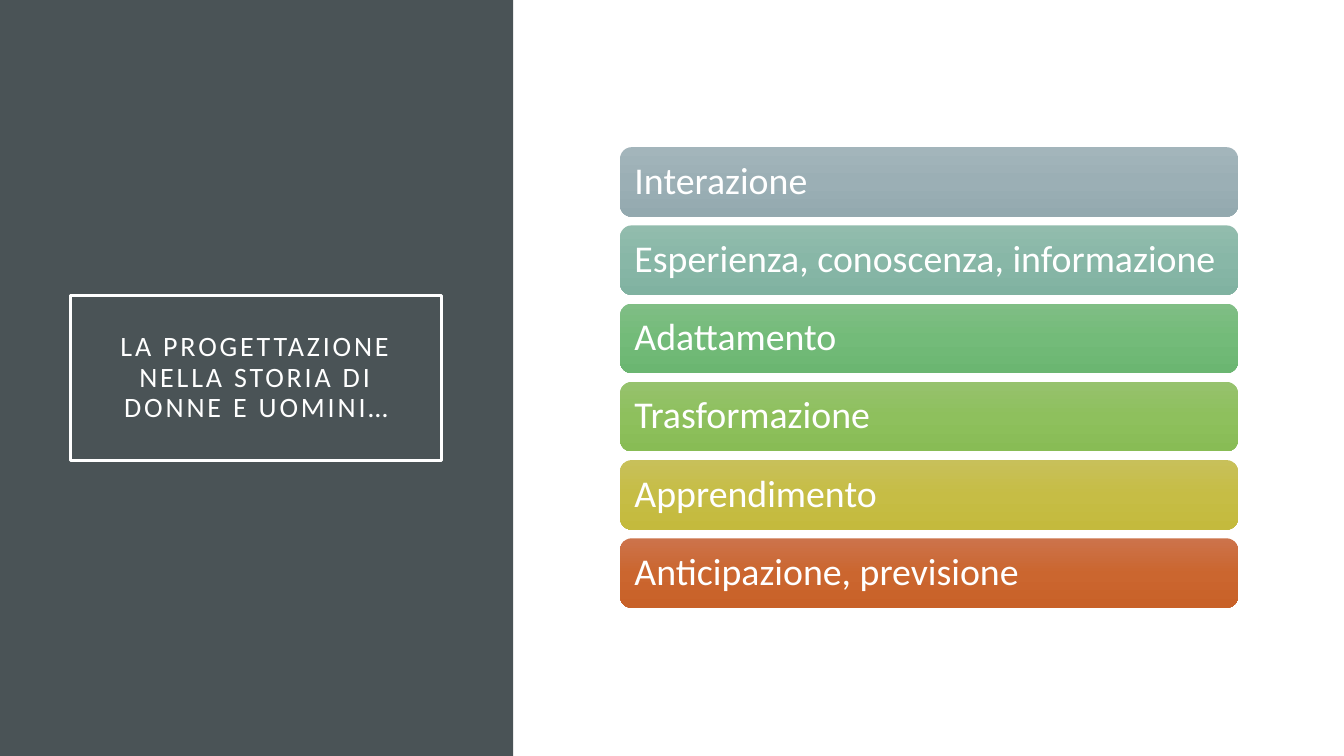
"""Build the slide on design in the history of women and men."""

from copy import deepcopy
from dataclasses import dataclass

from pptx import Presentation
from pptx.dml.color import RGBColor
from pptx.enum.shapes import MSO_SHAPE
from pptx.enum.text import MSO_ANCHOR, MSO_AUTO_SIZE, PP_ALIGN
from pptx.slide import Slide
from pptx.text.text import TextFrame
from pptx.util import Inches, Pt


@dataclass(frozen=True)
class Theme:
    font: str = "Calibri"
    white: RGBColor = RGBColor.from_string("FFFFFF")
    panel: RGBColor = RGBColor.from_string("4A5356")
    title_size: int = 20
    bar_size: int = 27
    line_spacing: float = 0.9


@dataclass(frozen=True)
class Bar:
    text: str
    top: str
    middle: str
    bottom: str


THEME = Theme()
TITLE = "LA PROGETTAZIONE NELLA STORIA DI DONNE E UOMINI…"
BARS = [
    Bar("Interazione", "A3B5BB", "9BAFB5", "93A9AF"),
    Bar("Esperienza, conoscenza, informazione", "92BCAD", "88B7A7", "80B2A1"),
    Bar("Adattamento", "80BE85", "73BB79", "6BB671"),
    Bar("Trasformazione", "96C26D", "8EC05D", "88BC55"),
    Bar("Apprendimento", "C8C05A", "C6BD45", "C4BA3D"),
    Bar("Anticipazione, previsione", "CC734B", "CB662F", "C86128"),
]
BAR_LEFT, BAR_TOP, BAR_WIDTH, BAR_HEIGHT = 6.15, 1.46, 6.13, 0.69
BAR_PITCH = 0.776


def write(tf: TextFrame, text: str, size: int, align: PP_ALIGN, inset: float) -> None:
    """Set the text, type and margins of a frame."""
    tf.text = text
    tf.word_wrap = True
    tf.auto_size = MSO_AUTO_SIZE.NONE
    tf.vertical_anchor = MSO_ANCHOR.MIDDLE
    tf.margin_left = tf.margin_right = Inches(inset)
    tf.margin_top = tf.margin_bottom = Inches(inset)
    p = tf.paragraphs[0]
    p.alignment = align
    p.line_spacing = THEME.line_spacing
    p.font.name = THEME.font
    p.font.size = Pt(size)
    p.font.color.rgb = THEME.white


def add_panel(slide: Slide) -> None:
    """Draw the dark panel on the left."""
    sp = slide.shapes.add_shape(MSO_SHAPE.RECTANGLE, 0, 0, Inches(5.09), Inches(7.5))
    sp.shadow.inherit = False
    sp.fill.solid()
    sp.fill.fore_color.rgb = THEME.panel
    sp.line.fill.background()


def format_title(slide: Slide) -> None:
    """Place the framed title in front of the panel."""
    sp = slide.shapes.title
    slide.shapes._spTree.append(sp._element)
    sp.left, sp.top = Inches(0.7), Inches(2.93)
    sp.width, sp.height = Inches(3.68), Inches(1.64)
    sp.line.color.rgb = THEME.white
    sp.line.width = Pt(2.5)
    write(sp.text_frame, TITLE, THEME.title_size, PP_ALIGN.CENTER, 0.2)
    r = sp.text_frame.paragraphs[0].runs[0]
    r._r.get_or_add_rPr().set("spc", "200")


def add_bar(slide: Slide, bar: Bar, top: float) -> None:
    """Draw a rounded bar with a three-stop vertical gradient."""
    sp = slide.shapes.add_shape(
        MSO_SHAPE.ROUNDED_RECTANGLE,
        Inches(BAR_LEFT), Inches(top), Inches(BAR_WIDTH), Inches(BAR_HEIGHT),
    )
    sp.shadow.inherit = False
    sp.line.fill.background()
    sp.fill.gradient()
    sp.fill.gradient_angle = 270
    first = sp.fill.gradient_stops[0]._gs
    first.addnext(deepcopy(first))
    colors = (bar.top, bar.middle, bar.bottom)
    for stop, position, color in zip(sp.fill.gradient_stops, (0, 0.5, 1), colors):
        stop.position = position
        stop.color.rgb = RGBColor.from_string(color)
    write(sp.text_frame, bar.text, THEME.bar_size, PP_ALIGN.LEFT, 0.11)


def main() -> None:
    """Build and save the presentation."""
    prs = Presentation()
    prs.slide_width, prs.slide_height = Inches(13.33), Inches(7.5)
    slide = prs.slides.add_slide(prs.slide_layouts[5])
    add_panel(slide)
    format_title(slide)
    for i, bar in enumerate(BARS):
        add_bar(slide, bar, BAR_TOP + i * BAR_PITCH)
    prs.save("out.pptx")


if __name__ == "__main__":
    main()
